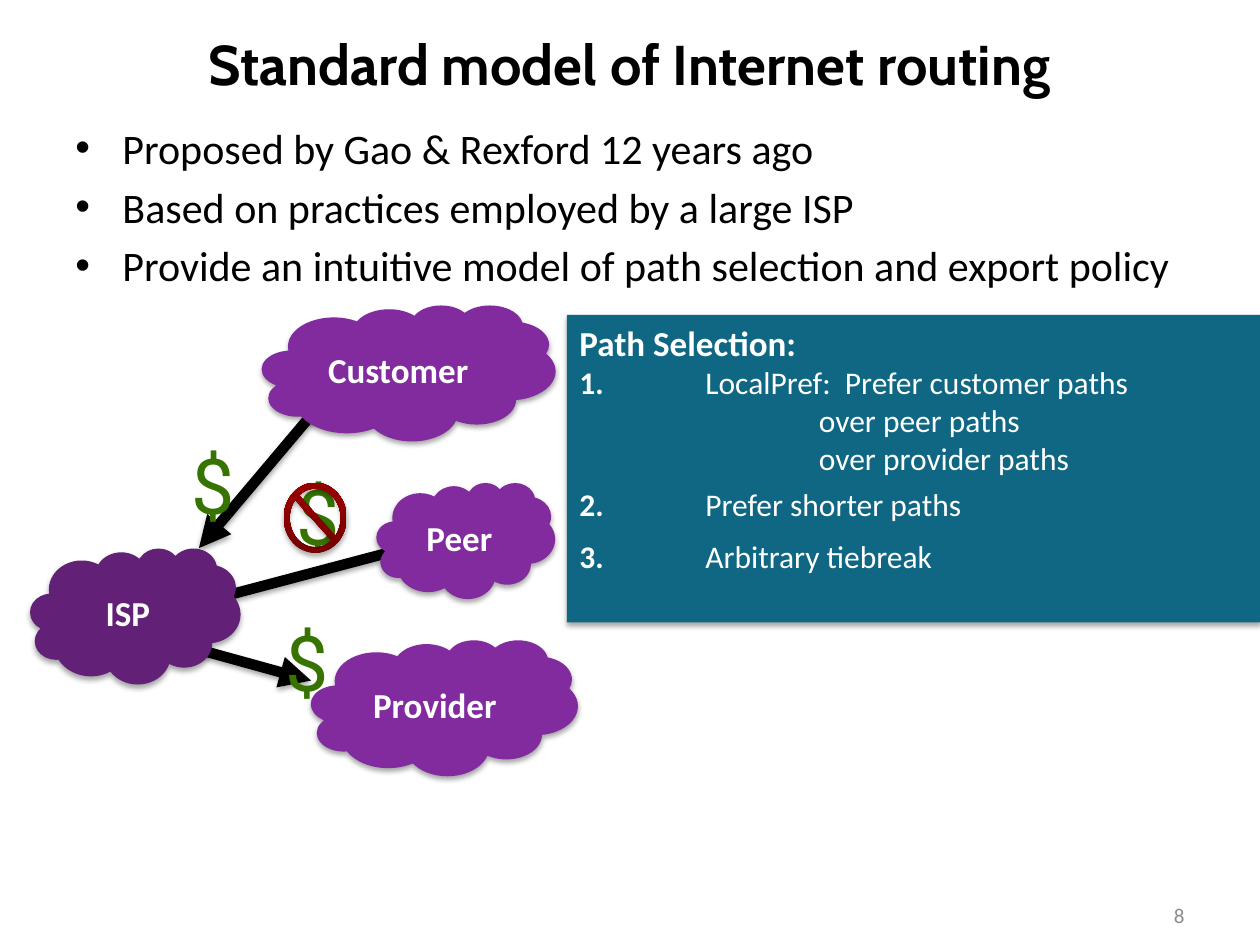
import pptx
import pptx.util
import pptx.dml.color
import pptx.enum.shapes
import pptx.enum.text
import pptx.oxml
import pptx.oxml.ns

Cm = pptx.util.Cm
Pt = pptx.util.Pt
SHAPES = pptx.enum.shapes.MSO_SHAPE
ALIGN = pptx.enum.text.PP_ALIGN
ANCHOR = pptx.enum.text.MSO_ANCHOR

COLORS = {
    "black": "000000", "white": "FFFFFF", "number": "8C8C8C",
    "panel": "0F6783", "isp": "622077", "neighbor": "822B9F",
    "dollar": "377300", "dark_red": "720000", "red": "950000",
}
TITLE = {"name": "Cabin", "size": Pt(32), "bold": True}
BODY = {"name": "Calibri", "size": Pt(24)}
NUMBER = {"name": "Calibri", "size": Pt(12)}
LABEL = {"name": "Calibri", "size": Pt(20), "bold": True}
RULE = {"name": "Calibri", "size": Pt(18), "bold": False}
RULE_NUMBER = {**RULE, "bold": True}
DOLLAR = {"name": "Roboto", "size": Pt(44)}


def rgb(name):
    return pptx.dml.color.RGBColor.from_string(COLORS[name])


def lengths(values):
    return [Cm(value) for value in values]


def apply(target, values):
    for name, value in values.items():
        setattr(target, name, value)


def add_run(paragraph, text, font, color):
    run = paragraph.add_run()
    run.text = text
    apply(run.font, font)
    run.font.color.rgb = rgb(color)


def set_indent(paragraph, margin, hanging=0):
    properties = paragraph._p.get_or_add_pPr()
    properties.set("marL", str(Cm(margin)))
    properties.set("indent", str(-Cm(hanging)))
    return properties


def add_shadow(shape):
    effects = pptx.oxml.parse_xml(
        f'<a:effectLst {pptx.oxml.ns.nsdecls("a")}>'
        '<a:outerShdw blurRad="39370" dist="22860" dir="5400000" rotWithShape="0">'
        '<a:srgbClr val="000000"><a:alpha val="35000"/></a:srgbClr>'
        '</a:outerShdw></a:effectLst>')
    shape._element.spPr.append(effects)


def add_text(slide, box, text, font, color, align=ALIGN.LEFT, anchor=ANCHOR.TOP):
    shape = slide.shapes.add_textbox(*lengths(box))
    apply(shape.text_frame, {"word_wrap": True, "vertical_anchor": anchor})
    paragraph = shape.text_frame.paragraphs[0]
    paragraph.alignment = align
    add_run(paragraph, text, font, color)


def add_filled(slide, kind, box, color):
    shape = slide.shapes.add_shape(kind, *lengths(box))
    shape.fill.solid()
    shape.fill.fore_color.rgb = rgb(color)
    shape.line.fill.background()
    add_shadow(shape)
    return shape


def add_bullets(slide, box, lines):
    frame = slide.shapes.add_textbox(*lengths(box)).text_frame
    frame.word_wrap = True
    for index, line in enumerate(lines):
        paragraph = frame.add_paragraph() if index else frame.paragraphs[0]
        paragraph.space_before = Pt(4.8)
        properties = set_indent(paragraph, 0.95, 0.95)
        for tag, name, value in (("buFont", "typeface", "Arial"), ("buChar", "char", "•")):
            bullet = properties.makeelement(pptx.oxml.ns.qn(f"a:{tag}"), {name: value})
            properties.append(bullet)
        add_run(paragraph, line, BODY, "black")


def add_path_selection(slide, box):
    frame = add_filled(slide, SHAPES.RECTANGLE, box, "panel").text_frame
    apply(frame, {"word_wrap": True, "vertical_anchor": ANCHOR.TOP})
    heading = frame.paragraphs[0]
    heading.alignment = ALIGN.LEFT
    add_run(heading, "Path Selection:", LABEL, "white")
    rules = (
        ("1.", "LocalPref:  Prefer customer paths", 0),
        ("", "over peer paths", 0),
        ("", "over provider paths", 0),
        ("2.", "Prefer shorter paths", 4.8),
        ("3.", "Arbitrary tiebreak", 8),
    )
    for number, text, gap in rules:
        paragraph = frame.add_paragraph()
        apply(paragraph, {"alignment": ALIGN.LEFT, "space_before": Pt(gap)})
        if number:
            set_indent(paragraph, 2.54, 2.54)
            add_run(paragraph, number, RULE_NUMBER, "white")
            add_run(paragraph, "\t" + text, RULE, "white")
        else:
            set_indent(paragraph, 4.83)
            add_run(paragraph, text, RULE, "white")


def add_link(slide, start, end, arrow):
    connector = slide.shapes.add_connector(
        pptx.enum.shapes.MSO_CONNECTOR.STRAIGHT, *lengths((*start, *end)))
    connector.line.width = Pt(6)
    connector.line.color.rgb = rgb("black")
    if arrow:
        line = connector.line._get_or_add_ln()
        line.append(line.makeelement(pptx.oxml.ns.qn("a:tailEnd"), {"type": "triangle"}))
    add_shadow(connector)


def add_cloud(slide, box, text, color):
    shape = add_filled(slide, SHAPES.CLOUD, box, color)
    apply(shape.text_frame, {"word_wrap": True, "vertical_anchor": ANCHOR.MIDDLE})
    paragraph = shape.text_frame.paragraphs[0]
    paragraph.alignment = ALIGN.CENTER
    add_run(paragraph, text, LABEL, color="white")


def add_no_payment(slide, box):
    shape = slide.shapes.add_shape(SHAPES.NO_SYMBOL, *lengths(box))
    shape.adjustments[0] = 0.095
    shape.fill.gradient()
    shape.fill.gradient_angle = 90
    for stop, color, position in zip(shape.fill.gradient_stops, ("dark_red", "red"), (0, 0.8)):
        stop.color.rgb = rgb(color)
        stop.position = position
    shape.line.fill.background()
    add_shadow(shape)


def add_relationships(slide, box):
    left, top = box[:2]

    def at(x, y, *size):
        return (left + x, top + y, *size)

    links = (
        ((6.38, 1.37), (3.4, 4.9), True),
        ((2.69, 6.19), (7.57, 4.9), False),
        ((2.69, 6.75), (5.66, 7.57), True),
    )
    for start, end, arrow in links:
        add_link(slide, at(*start), at(*end), arrow)
    clouds = (
        ("ISP", (0, 4.9, 4.24, 2.74), "isp"),
        ("Customer", (4.67, 0, 5.92, 2.74), "neighbor"),
        ("Peer", (6.98, 3.58, 3.6, 2.34), "neighbor"),
        ("Provider", (5.66, 6.75, 5.38, 2.74), "neighbor"),
    )
    for text, place, color in clouds:
        add_cloud(slide, at(*place), text, color)
    for place in ((5.11, 3.17), (3, 2.54), (4.9, 6.12)):
        add_text(slide, at(*place, 1.07, 2.13), "$", DOLLAR, "dollar")
    add_no_payment(slide, at(5.11, 3.58, 1.27, 1.42))


def main():
    presentation = pptx.Presentation()
    apply(presentation, {"slide_width": Cm(25.4), "slide_height": Cm(19.05)})
    slide = presentation.slides.add_slide(presentation.slide_layouts[6])
    add_text(slide, (1.27, 0.43, 22.86, 1.7), "Standard model of Internet routing",
             TITLE, "black", ALIGN.CENTER, ANCHOR.MIDDLE)
    add_bullets(slide, (1.27, 2.34, 22.86, 14.68), (
        "Proposed by Gao & Rexford 12 years ago",
        "Based on practices employed by a large ISP",
        "Provide an intuitive model of path selection and export policy",
    ))
    add_text(slide, (18.21, 18.21, 5.92, 0.46), "8", NUMBER, "number",
             ALIGN.RIGHT, ANCHOR.MIDDLE)
    add_path_selection(slide, (11.43, 6.35, 13.97, 6.2))
    add_relationships(slide, (0.61, 6.15, 11.04, 9.5))
    presentation.save("out.pptx")


if __name__ == "__main__":
    main()
